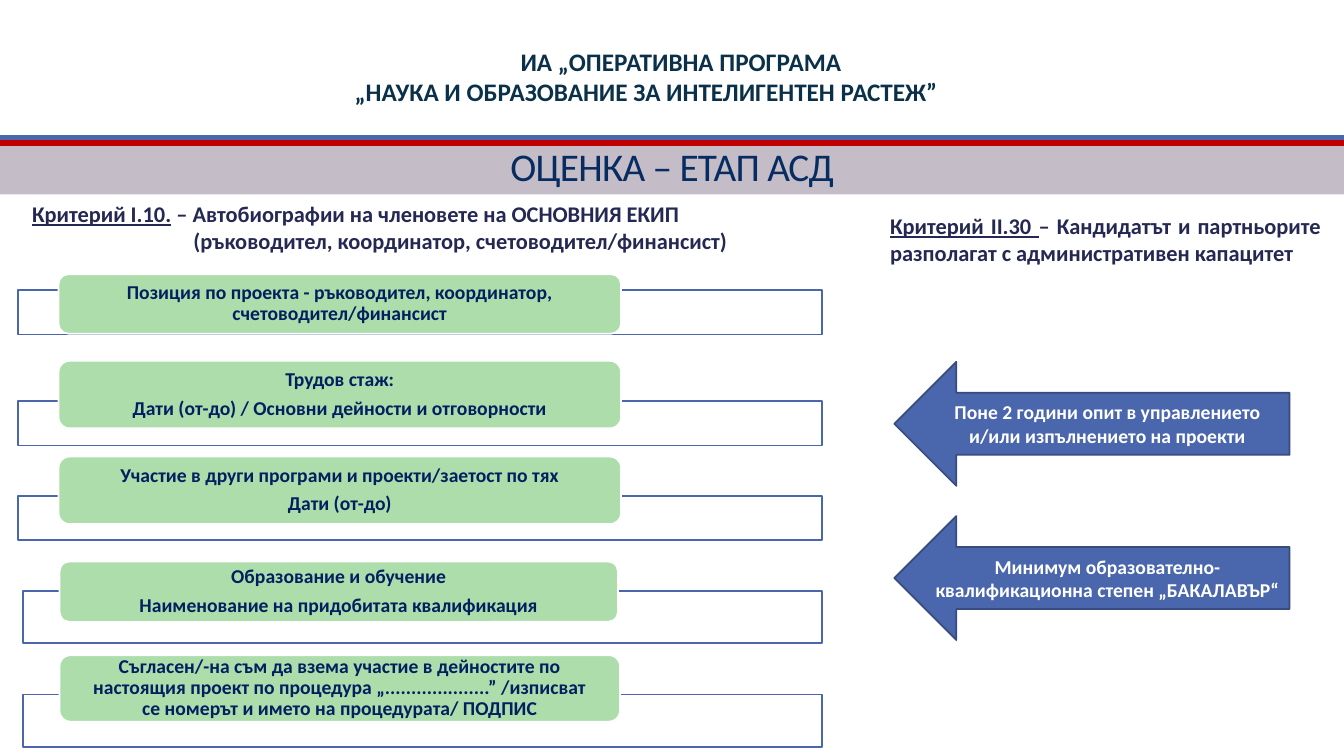
from dataclasses import dataclass

from lxml.etree import SubElement
from pptx import Presentation
from pptx.dml.color import RGBColor
from pptx.enum.shapes import MSO_CONNECTOR, MSO_SHAPE
from pptx.enum.text import MSO_ANCHOR, PP_ALIGN
from pptx.oxml.ns import qn
from pptx.shapes.autoshape import Shape
from pptx.slide import Slide
from pptx.text.text import _Paragraph as Paragraph
from pptx.util import Inches, Pt


@dataclass(frozen=True)
class Theme:
    font: str = "Calibri"
    white: str = "FFFFFF"
    blue: str = "4A66AC"
    dark_blue: str = "374B7F"
    red: str = "C00000"
    green: str = "ADDDAB"
    band: str = "C4BCC6"
    header_text: str = "0A304A"
    title_text: str = "072C62"
    criterion_text: str = "242852"
    step_text: str = "002060"
    title_size: float = 28
    header_size: float = 18
    criterion_size: float = 16
    label_size: float = 14
    outline: float = 1.25
    rule: float = 3.75


@dataclass(frozen=True)
class Box:
    left: float
    top: float
    width: float
    height: float

    def lengths(self) -> tuple[int, int, int, int]:
        return Inches(self.left), Inches(self.top), Inches(self.width), Inches(self.height)


@dataclass(frozen=True)
class Step:
    frame: Box
    label: Box
    text: str


@dataclass(frozen=True)
class Requirement:
    top: float
    text: str


THEME = Theme()
RULES = [(1.37, THEME.blue), (1.42, THEME.red)]
STEPS = [
    Step(Box(0.18, 2.88, 7.97, 0.44), Box(0.58, 2.72, 5.58, 0.59),
         "Позиция по проекта - ръководител, координатор, счетоводител/финансист"),
    Step(Box(0.18, 3.98, 7.97, 0.44), Box(0.58, 3.58, 5.58, 0.67),
         "Трудов стаж:\nДати (от-до) / Основни дейности и отговорности"),
    Step(Box(0.18, 4.92, 7.97, 0.44), Box(0.58, 4.53, 5.58, 0.67),
         "Участие в други програми и проекти/заетост по тях\nДати (от-до)"),
    Step(Box(0.23, 5.86, 7.92, 0.52), Box(0.59, 5.57, 5.54, 0.6),
         "Образование и обучение\nНаименование на придобитата квалификация"),
    Step(Box(0.23, 6.89, 7.92, 0.52), Box(0.59, 6.5, 5.56, 0.66),
         "Съгласен/-на съм да взема участие в дейностите по настоящия проект "
         "по процедура „....................” /изписват се номерът и името "
         "на процедурата/ ПОДПИС"),
]
REQUIREMENTS = [
    Requirement(3.59, "Поне 2 години опит в управлението и/или изпълнението на проекти"),
    Requirement(5.12, "Минимум образователно-квалификационна степен „БАКАЛАВЪР“"),
]


def color(value: str) -> RGBColor:
    return RGBColor.from_string(value)


def format_runs(paragraph: Paragraph, size: float, text_color: str, bold: bool = True) -> None:
    for run in paragraph.runs:
        run.font.name = THEME.font
        run.font.size = Pt(size)
        run.font.bold = bold
        run.font.color.rgb = color(text_color)


def add_rule(slide: Slide, top: float, line_color: str) -> None:
    rule = slide.shapes.add_connector(
        MSO_CONNECTOR.STRAIGHT, 0, Inches(top), Inches(13.33), Inches(top))
    rule.line.color.rgb = color(line_color)
    rule.line.width = Pt(THEME.rule)
    SubElement(rule._element.spPr, qn("a:effectLst"))


def add_panel(slide: Slide, kind: MSO_SHAPE, box: Box, fill: str, line: str) -> Shape:
    panel = slide.shapes.add_shape(kind, *box.lengths())
    panel.shadow.inherit = False
    panel.fill.solid()
    panel.fill.fore_color.rgb = color(fill)
    panel.line.color.rgb = color(line)
    panel.line.width = Pt(THEME.outline)
    return panel


def fill_label(shape: Shape, text: str, text_color: str) -> None:
    frame = shape.text_frame
    frame.text = text
    frame.word_wrap = True
    frame.vertical_anchor = MSO_ANCHOR.MIDDLE
    for paragraph in frame.paragraphs:
        paragraph.alignment = PP_ALIGN.CENTER
        format_runs(paragraph, THEME.label_size, text_color)


def add_step(slide: Slide, step: Step) -> None:
    frame = add_panel(slide, MSO_SHAPE.RECTANGLE, step.frame, THEME.white, THEME.blue)
    fill_color = frame._element.spPr.find(qn("a:solidFill"))[0]
    SubElement(fill_color, qn("a:alpha"), val="90000")
    label = add_panel(slide, MSO_SHAPE.ROUNDED_RECTANGLE, step.label, THEME.green, THEME.white)
    fill_label(label, step.text, THEME.step_text)
    text_frame = label.text_frame
    text_frame.margin_left = text_frame.margin_right = Inches(0.21)
    text_frame.margin_top = text_frame.margin_bottom = 0
    for paragraph in text_frame.paragraphs:
        paragraph.line_spacing = 0.9
        paragraph.space_after = Pt(5)


def add_requirement(slide: Slide, requirement: Requirement) -> None:
    box = Box(8.87, requirement.top, 3.92, 1.23)
    arrow = add_panel(slide, MSO_SHAPE.LEFT_ARROW, box, THEME.blue, THEME.dark_blue)
    fill_label(arrow, requirement.text, THEME.white)


def add_text(slide: Slide, box: Box, text: str, size: float, text_color: str) -> list[Paragraph]:
    frame = slide.shapes.add_textbox(*box.lengths()).text_frame
    frame.word_wrap = True
    frame.text = text
    for paragraph in frame.paragraphs:
        format_runs(paragraph, size, text_color)
    return list(frame.paragraphs)


def add_criterion(slide: Slide, box: Box, name: str, text: str) -> list[Paragraph]:
    paragraphs = add_text(slide, box, name + text, THEME.criterion_size, THEME.criterion_text)
    first = paragraphs[0]
    first.runs[0].text = first.runs[0].text.removeprefix(name)
    rest = first.runs[0].text
    first.runs[0].text = name
    first.runs[0].font.underline = True
    first.add_run().text = rest
    format_runs(first, THEME.criterion_size, THEME.criterion_text)
    return paragraphs


def set_title(slide: Slide) -> None:
    title = slide.shapes.title
    title.left, title.top, title.width, title.height = Box(0, 1.45, 13.33, 0.48).lengths()
    title.fill.solid()
    title.fill.fore_color.rgb = color(THEME.band)
    title.text_frame.text = "ОЦЕНКА – ЕТАП АСД"
    title.text_frame.vertical_anchor = MSO_ANCHOR.BOTTOM
    paragraph = title.text_frame.paragraphs[0]
    paragraph.alignment = PP_ALIGN.CENTER
    paragraph.line_spacing = 0.85
    format_runs(paragraph, THEME.title_size, THEME.title_text, bold=False)
    paragraph.runs[0].font._element.set("spc", "-50")


def main() -> None:
    presentation = Presentation()
    presentation.slide_width, presentation.slide_height = Inches(13.33), Inches(7.5)
    slide = presentation.slides.add_slide(presentation.slide_layouts[5])
    set_title(slide)
    for top, line_color in RULES:
        add_rule(slide, top, line_color)
    header = add_text(
        slide, Box(3.42, 0.41, 6.67, 0.71),
        "ИА „ОПЕРАТИВНА ПРОГРАМА\n„НАУКА И ОБРАЗОВАНИЕ ЗА ИНТЕЛИГЕНТЕН РАСТЕЖ”",
        THEME.header_size, THEME.header_text)
    header[0].alignment = PP_ALIGN.CENTER
    team = add_criterion(
        slide, Box(0.22, 1.94, 12.97, 0.94), "Критерий I.10.",
        " – Автобиографии на членовете на ОСНОВНИЯ ЕКИП\n"
        "(ръководител, координатор, счетоводител/финансист)")
    team[1]._p.get_or_add_pPr().set("marL", str(Inches(1.6)))
    for requirement in REQUIREMENTS:
        add_requirement(slide, requirement)
    for step in STEPS:
        add_step(slide, step)
    capacity = add_criterion(
        slide, Box(8.73, 2.06, 4.47, 0.64), "Критерий II.30 ",
        "– Кандидатът и партньорите разполагат с административен капацитет")
    capacity[0].alignment = PP_ALIGN.JUSTIFY
    presentation.save("out.pptx")


if __name__ == "__main__":
    main()
